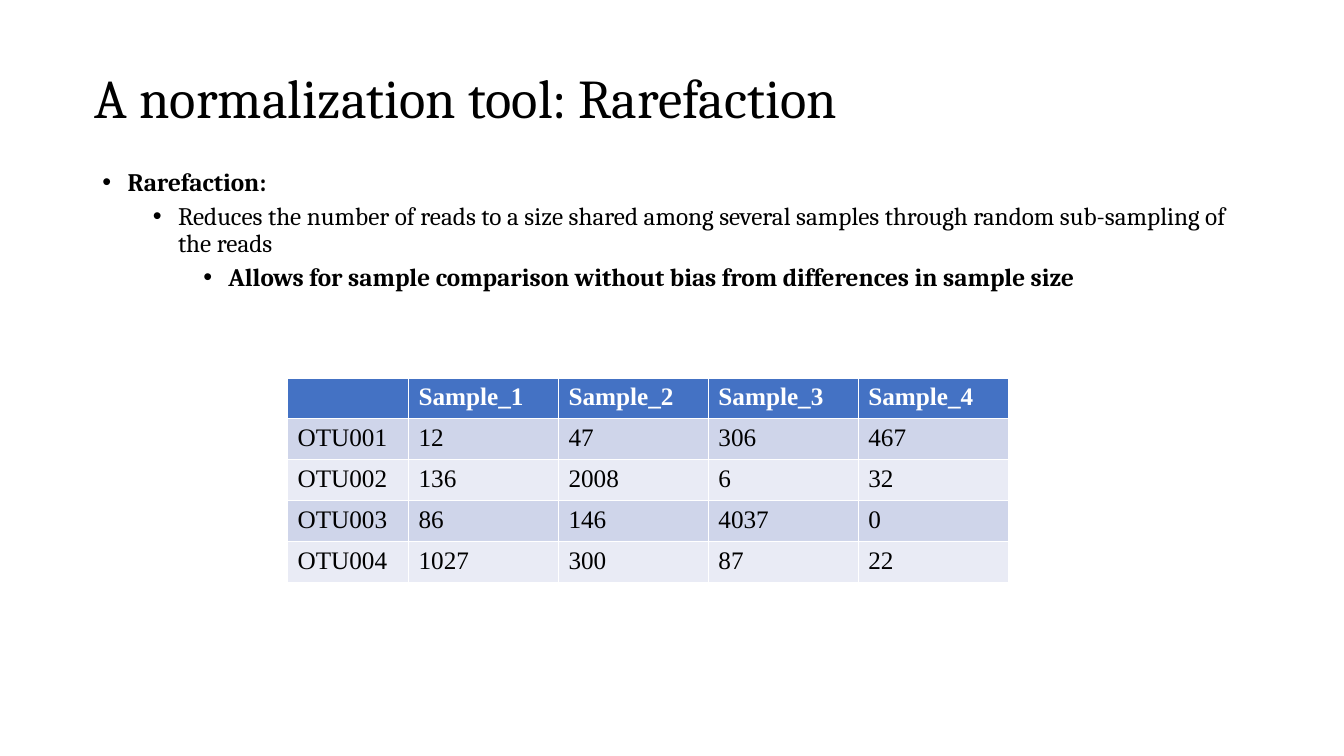
from lxml.etree import SubElement
from pptx import Presentation
from pptx.dml.color import RGBColor
from pptx.enum.text import MSO_ANCHOR, MSO_AUTO_SIZE, PP_ALIGN
from pptx.oxml.ns import qn
from pptx.util import Pt

HUES = {"ink": "000000", "paper": "FFFFFF", "head": "4472C4",
        "odd": "CFD5EA", "even": "E9EBF5"}
FRAME = {"word_wrap": True, "auto_size": MSO_AUTO_SIZE.NONE}
TITLE = {"name": "Cambria", "size": Pt(39), "bold": False}
BODY = {"name": "Cambria", "size": Pt(18)}
CELL = {"name": "Times New Roman", "size": Pt(18)}
POINTS = [
    ("Rarefaction:", True),
    ("Reduces the number of reads to a size shared among several samples "
     "through random sub-sampling of the reads", False),
    ("Allows for sample comparison without bias from differences in sample size", True),
]
ROWS = [
    ("", "Sample_1", "Sample_2", "Sample_3", "Sample_4"),
    ("OTU001", "12", "47", "306", "467"),
    ("OTU002", "136", "2008", "6", "32"),
    ("OTU003", "86", "146", "4037", "0"),
    ("OTU004", "1027", "300", "87", "22"),
]


def apply(item, values):
    for key, value in values.items():
        setattr(item, key, value)


def style(font, values, hue):
    apply(font, values)
    font.color.rgb = RGBColor.from_string(HUES[hue])


def place(shape, box):
    apply(shape, dict(zip(("left", "top", "width", "height"), map(Pt, box))))


def bullet(para, level):
    props = para._p.get_or_add_pPr()
    props.set("marL", str(Pt(18 + 36 * level)))
    props.set("indent", str(Pt(-18)))
    SubElement(props, qn("a:buFont")).set("typeface", "Arial")
    SubElement(props, qn("a:buChar")).set("char", "•")


def add_title(slide, box):
    title = slide.shapes.title
    place(title, box)
    frame = title.text_frame
    frame.text = "A normalization tool: Rarefaction"
    apply(frame, {**FRAME, "vertical_anchor": MSO_ANCHOR.MIDDLE})
    para = frame.paragraphs[0]
    apply(para, {"alignment": PP_ALIGN.LEFT, "line_spacing": 0.9})
    style(para.runs[0].font, TITLE, "ink")


def add_body(slide, box):
    body = slide.placeholders[1]
    place(body, box)
    frame = body.text_frame
    apply(frame, FRAME)
    frame.text = "\n".join(text for text, bold in POINTS)
    for level, (para, (text, bold)) in enumerate(zip(frame.paragraphs, POINTS)):
        apply(para, {"level": level, "line_spacing": 0.9,
                     "space_before": Pt(5 if level else 10)})
        bullet(para, level)
        style(para.runs[0].font, {**BODY, "bold": bold}, "ink")


def add_counts(slide, box):
    first = 86.4
    rest = (box[2] - first) / (len(ROWS[0]) - 1)
    table = slide.shapes.add_table(len(ROWS), len(ROWS[0]), *map(Pt, box)).table
    for col, column in enumerate(table.columns):
        column.width = Pt(rest if col else first)
    for row, values in enumerate(ROWS):
        table.rows[row].height = Pt(box[3] / len(ROWS))
        fill = ("even", "odd")[row % 2] if row else "head"
        for col, text in enumerate(values):
            cell = table.cell(row, col)
            cell.text = text
            cell.fill.solid()
            cell.fill.fore_color.rgb = RGBColor.from_string(HUES[fill])
            style(cell.text_frame.paragraphs[0].font,
                  {**CELL, "bold": row == 0}, "ink" if row else "paper")


def main():
    deck = Presentation()
    apply(deck, {"slide_width": Pt(960), "slide_height": Pt(540)})
    slide = deck.slides.add_slide(deck.slide_layouts[1])
    add_title(slide, (60.5, 43.2, 699, 58.3))
    add_body(slide, (66, 117.4, 828, 133.2))
    add_counts(slide, (205.4, 270, 514.8, 146))
    deck.save("out.pptx")


if __name__ == "__main__":
    main()
